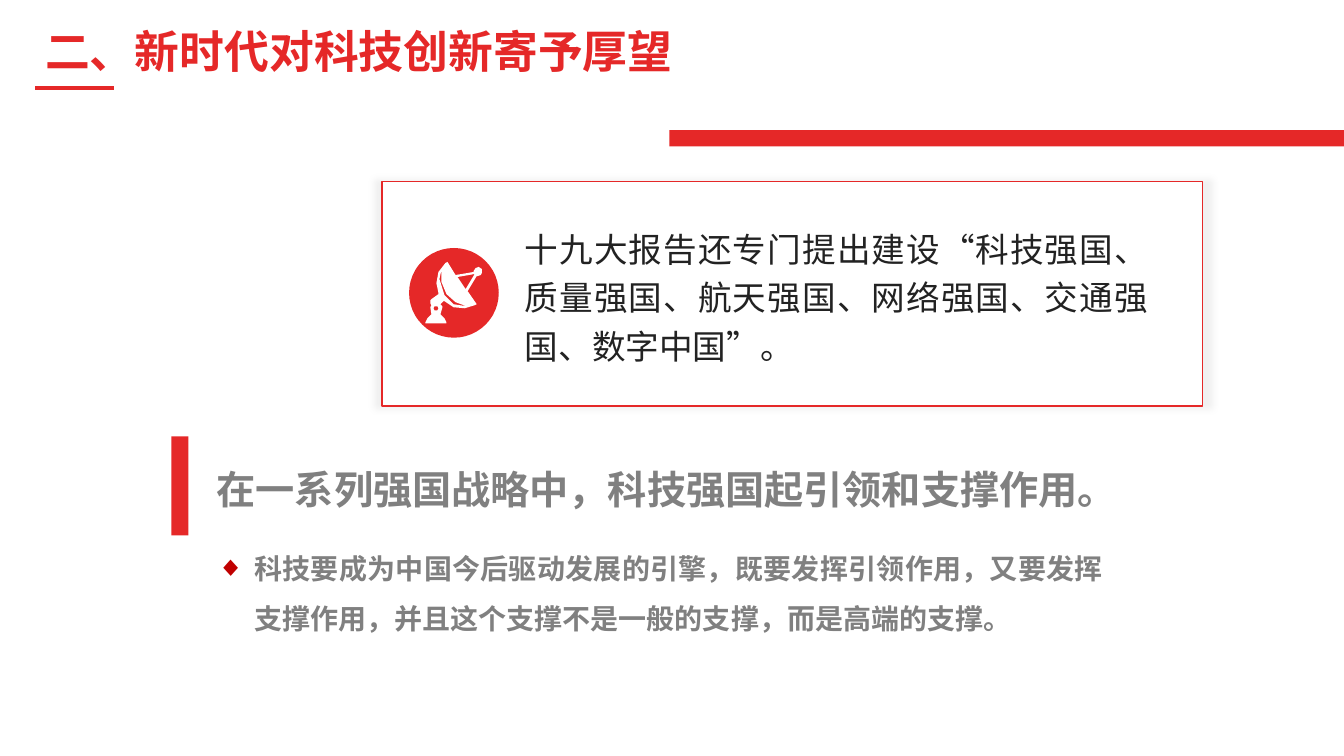
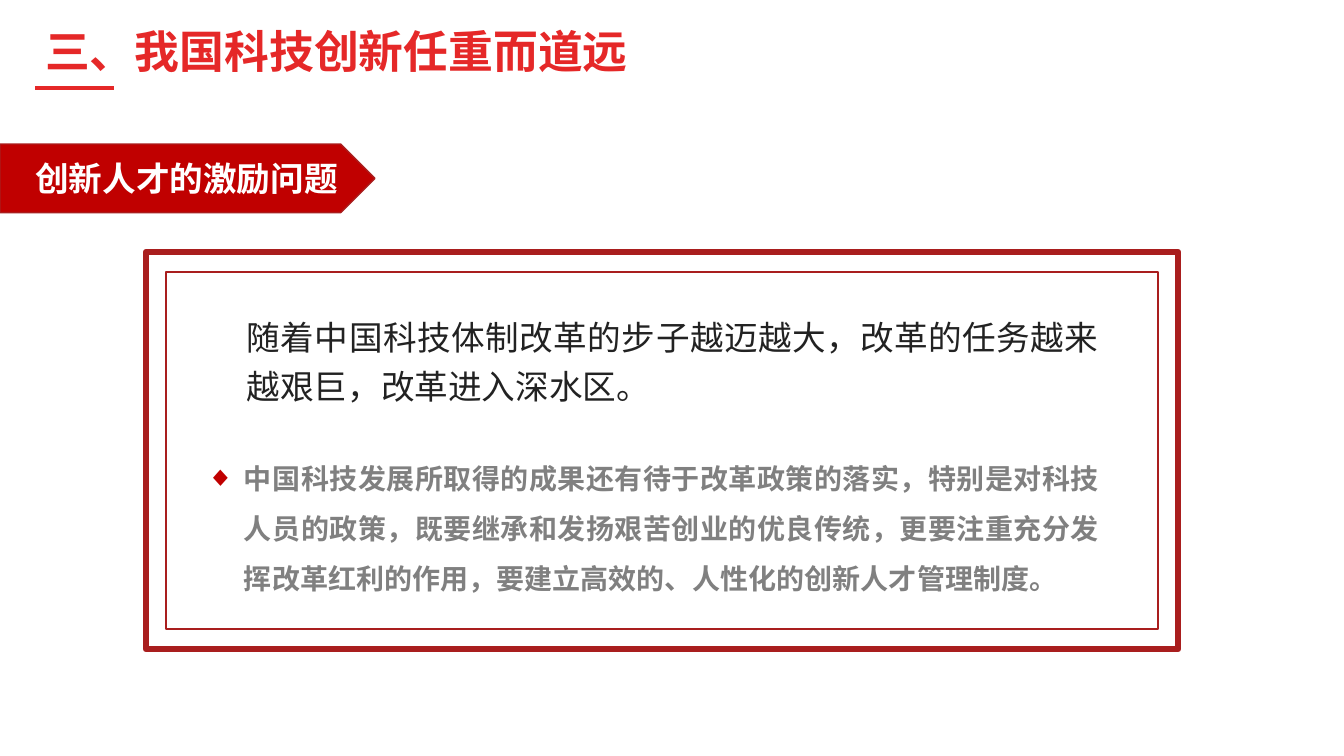
"""Builds two slides on science and technology innovation."""
from lxml import etree
from pptx import Presentation
from pptx.dml.color import RGBColor
from pptx.enum.shapes import MSO_CONNECTOR, MSO_SHAPE
from pptx.enum.text import MSO_ANCHOR, MSO_AUTO_SIZE, PP_ALIGN
from pptx.oxml.ns import qn
from pptx.util import Cm, Pt

RECTANGLE = MSO_SHAPE.RECTANGLE
OVAL = MSO_SHAPE.OVAL
PENTAGON = MSO_SHAPE.PENTAGON
STRAIGHT = MSO_CONNECTOR.STRAIGHT
MIDDLE = MSO_ANCHOR.MIDDLE
GROW = MSO_AUTO_SIZE.SHAPE_TO_FIT_TEXT
LEFT = PP_ALIGN.LEFT
JUSTIFY = PP_ALIGN.JUSTIFY

FONT = "Arial"
COLORS = {
    "red": "E52828",
    "deep": "C00000",
    "frame": "A91E1E",
    "white": "FFFFFF",
    "ink": "222222",
    "gray": "808080",
    "black": "000000",
}
STYLES = {
    "title": {"size": 32, "color": "red", "bold": True, "align": LEFT, "spacing": 1.0},
    "banner": {"size": 24, "color": "white", "bold": True, "align": LEFT, "spacing": 1.0},
    "lead": {"size": 24, "color": "ink", "bold": False, "align": JUSTIFY, "spacing": 1.2},
    "claim": {"size": 28, "color": "gray", "bold": True, "align": JUSTIFY, "spacing": 1.5},
    "detail": {"size": 20, "color": "gray", "bold": True, "align": JUSTIFY, "spacing": 1.5},
}
DISH_UNIT = Cm(0.0254)
DISH_CONTOURS = [
    [(22, 0), (30, 13), (48, 10), (48, 9), (50, 6), (53, 5), (56, 7), (56, 11),
     (55, 13), (52, 14), (51, 14), (42, 29), (51, 42), (49, 43), (39, 46),
     (28, 45), (19, 39), (18, 39), (15, 42), (17, 44), (17, 45), (15, 52),
     (16, 53), (19, 56), (21, 60), (21, 61), (0, 61), (0, 60), (2, 56), (5, 53),
     (6, 52), (5, 45), (6, 43), (5, 41), (5, 38), (6, 37), (13, 32), (13, 31),
     (11, 21), (13, 10), (20, 1)],
    [(49, 12), (32, 15), (40, 27)],
    [(16, 8), (14, 17), (19, 33), (28, 42), (41, 44), (30, 40), (21, 32), (16, 20)],
    [(9, 44), (12, 44), (13, 46), (12, 48), (9, 48), (8, 46)],
]


def rgb(name):
    return RGBColor.from_string(COLORS[name])


def paint(shape, fill=None, line=None, weight=1):
    shape.shadow.inherit = False
    if fill:
        shape.fill.solid()
        shape.fill.fore_color.rgb = rgb(fill)
    else:
        shape.fill.background()
    if line:
        shape.line.color.rgb = rgb(line)
        shape.line.width = Pt(weight)
    else:
        shape.line.fill.background()


def add_block(page, kind, area, **look):
    shape = page.shapes.add_shape(kind, *map(Cm, area))
    paint(shape, **look)
    return shape


def add_glow(shape):
    effects = shape._element.spPr.find(qn("a:effectLst"))
    glow = etree.SubElement(effects, qn("a:outerShdw"), blurRad=str(Pt(5)),
                            sx="102000", sy="102000", algn="ctr", rotWithShape="0")
    color = etree.SubElement(glow, qn("a:srgbClr"), val=COLORS["black"])
    etree.SubElement(color, qn("a:alpha"), val="5000")


def add_bullet(para):
    props = para._p.get_or_add_pPr()
    props.set("marL", str(Cm(0.95)))
    props.set("indent", str(Cm(-0.95)))
    color = etree.SubElement(props, qn("a:buClr"))
    etree.SubElement(color, qn("a:srgbClr"), val=COLORS["deep"])
    etree.SubElement(props, qn("a:buFont"), typeface=FONT)
    etree.SubElement(props, qn("a:buChar"), char="◆")


def write(frame, text, style_name, bullet=False):
    style = STYLES[style_name]
    para = frame.paragraphs[0]
    para.text = text
    para.alignment = style["align"]
    para.line_spacing = style["spacing"]
    if bullet:
        add_bullet(para)
    para.font.name = FONT
    para.font.size = Pt(style["size"])
    para.font.bold = style["bold"]
    para.font.color.rgb = rgb(style["color"])


def add_text(page, area, text, style_name, wrap=True, bullet=False):
    frame = page.shapes.add_textbox(*map(Cm, area)).text_frame
    frame.word_wrap = wrap
    frame.auto_size = GROW
    write(frame, text, style_name, bullet)


def add_title(page, text, width):
    rule = page.shapes.add_connector(STRAIGHT, Cm(0.89), Cm(2.21), Cm(2.87), Cm(2.21))
    rule.line.color.rgb = rgb("red")
    rule.line.width = Pt(3)
    etree.SubElement(rule._element.spPr, qn("a:effectLst"))
    add_text(page, (0.89, 0.48, width, 1.63), text, "title", wrap=False)


def add_banner(page, text):
    banner = add_block(page, PENTAGON, (0, 3.63, 9.45, 1.73),
                       fill="deep", line="frame")
    frame = banner.text_frame
    frame.word_wrap = True
    frame.vertical_anchor = MIDDLE
    frame.margin_left = Cm(0.89)
    frame.margin_right = 0
    write(frame, text, "banner")


def add_dish(page, left, top):
    first, *rest = DISH_CONTOURS
    builder = page.shapes.build_freeform(*first[0], scale=DISH_UNIT)
    builder.add_line_segments(first[1:], close=True)
    for contour in rest:
        builder.move_to(*contour[0])
        builder.add_line_segments(contour[1:], close=True)
    paint(builder.convert_to_shape(Cm(left), Cm(top)), fill="white")


def build_hopes(page):
    card = add_block(page, RECTANGLE, (9.63, 4.57, 20.68, 5.66),
                     fill="white", line="red")
    add_glow(card)
    add_title(page, "二、新时代对科技创新寄予厚望", 16.54)
    add_text(page, (12.98, 5.44, 16.21, 3.96),
             "十九大报告还专门提出建设“科技强国、质量强国、航天强国、网络强国、交通强国、数字中国”。",
             "lead")
    add_text(page, (5.21, 11, 24.79, 1.83),
             "在一系列强国战略中，科技强国起引领和支撑作用。", "claim")
    add_block(page, RECTANGLE, (16.87, 3.28, 17, 0.41), fill="red")
    add_block(page, OVAL, (10.31, 6.25, 2.26, 2.26), fill="red")
    add_dish(page, 10.72, 6.6)
    add_block(page, RECTANGLE, (4.32, 11, 0.43, 2.49), fill="red")
    add_text(page, (5.21, 13.34, 22.83, 2.82),
             "科技要成为中国今后驱动发展的引擎，既要发挥引领作用，又要发挥支撑作用，"
             "并且这个支撑不是一般的支撑，而是高端的支撑。",
             "detail", bullet=True)


def build_tasks(page):
    add_banner(page, "创新人才的激励问题")
    add_title(page, "三、我国科技创新任重而道远", 15.34)
    add_text(page, (5.97, 7.67, 21.97, 2.72),
             "随着中国科技体制改革的步子越迈越大，改革的任务越来越艰巨，改革进入深水区。",
             "lead")
    add_text(page, (4.95, 11.07, 22.99, 4.11),
             "中国科技发展所取得的成果还有待于改革政策的落实，特别是对科技人员的政策，"
             "既要继承和发扬艰苦创业的优良传统，更要注重充分发挥改革红利的作用，"
             "要建立高效的、人性化的创新人才管理制度。",
             "detail", bullet=True)
    for inset, weight in ((0, 4.5), (0.51, 1.5)):
        area = (3.68 + inset, 6.35 + inset, 26.01 - 2 * inset, 10.01 - 2 * inset)
        add_block(page, RECTANGLE, area, line="frame", weight=weight)


def main():
    deck = Presentation()
    deck.slide_width = Cm(33.87)
    deck.slide_height = Cm(19.05)
    blank = deck.slide_layouts[6]
    for build in (build_hopes, build_tasks):
        build(deck.slides.add_slide(blank))
    deck.save("out.pptx")


if __name__ == "__main__":
    main()
